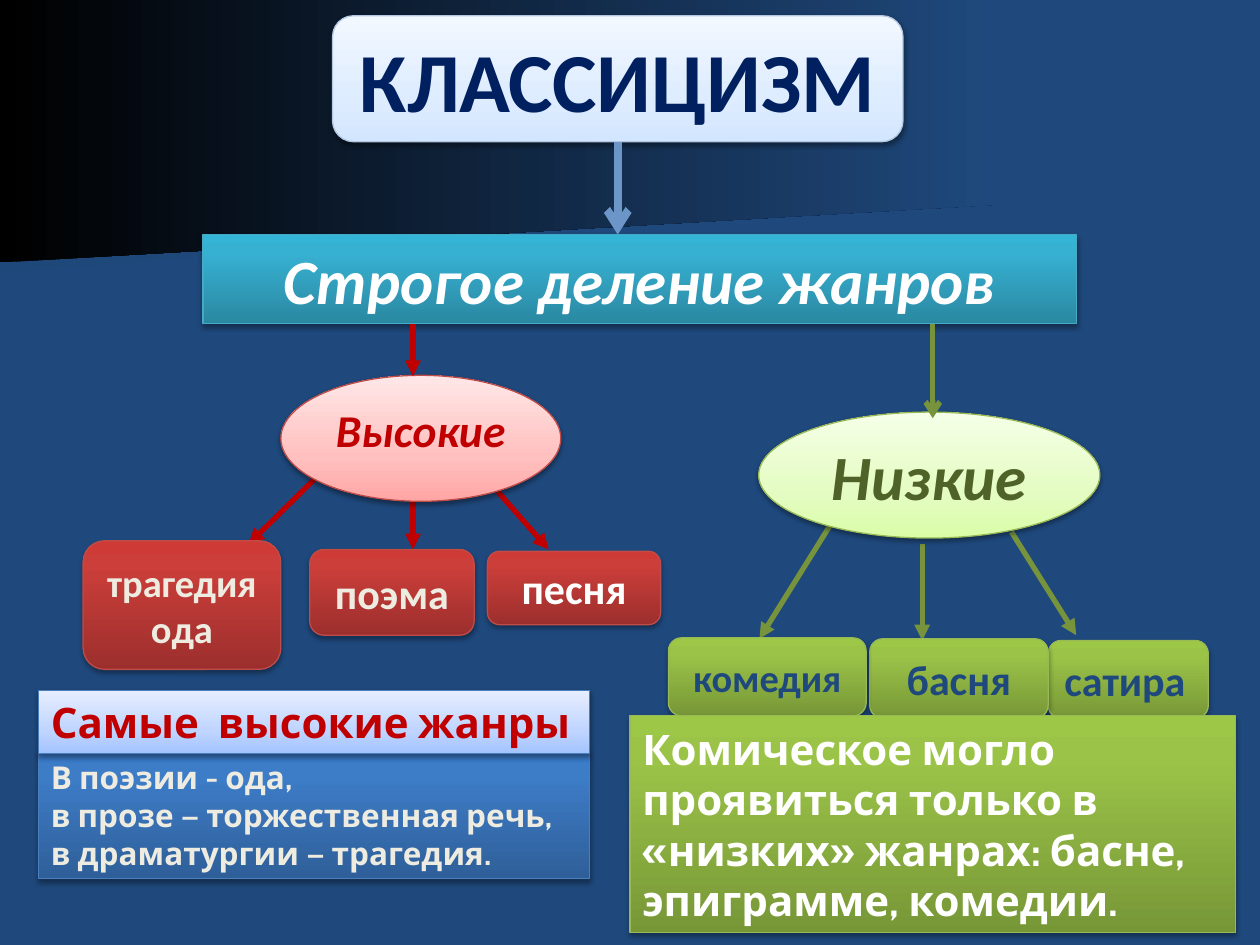
from dataclasses import dataclass
from typing import NamedTuple

from lxml.etree import SubElement
from pptx import Presentation
from pptx.dml.color import RGBColor
from pptx.enum.shapes import MSO_CONNECTOR, MSO_SHAPE
from pptx.enum.text import MSO_ANCHOR, PP_ALIGN
from pptx.oxml.ns import qn
from pptx.util import Pt


class Finish(NamedTuple):
    stops: tuple  # (position in percent, colour), from bottom to top
    outline: str
    shadow: tuple = (35, 1.8)  # opacity in percent, distance


PALE_SHADOW = (38, 1.6)


@dataclass(frozen=True)
class Theme:
    ground: str = "1F497D"
    black: str = "000000"
    sweep: str = "1E477A"
    white: str = "FFFFFF"
    cream: str = "EEECE1"
    navy: str = "002060"
    red: str = "C00000"
    green: str = "77933C"
    dark_green: str = "4F6228"
    blue: str = "6D96C8"

    title_size: int = 48
    heading_size: int = 36
    subheading_size: int = 26
    genre_size: int = 24
    long_genre_size: int = 22
    body_size: int = 18
    font: str = "Calibri"
    note_font: str = "Cabin"

    ice: Finish = Finish(((0, "D2E6FF"), (35, "DEECFF"), (100, "F2F8FF")), "B3C7E0", PALE_SHADOW)
    lavender: Finish = Finish(((0, "A4C4FF"), (35, "BFD4FF"), (100, "E6EEFF")), "4B7EBC", PALE_SHADOW)
    pink: Finish = Finish(((0, "FFA6A5"), (35, "FFC0BF"), (100, "FFE7E7")), "BF4C48", PALE_SHADOW)
    lime: Finish = Finish(((0, "DAFDA7"), (35, "E4FCC2"), (100, "F5FFE7")), "98B955", PALE_SHADOW)
    teal: Finish = Finish(((0, "2A88A2"), (80, "37B1D2"), (100, "34B4D6")), "46AAC5")
    brick: Finish = Finish(((0, "9C2F2D"), (80, "CB3E3A"), (100, "CE3B37")), "BF4C48")
    grass: Finish = Finish(((0, "779737"), (80, "9BC348"), (100, "9DC746")), "98B955")
    azure: Finish = Finish(((0, "2F5F99"), (80, "3D7CC7"), (100, "3A7CCB")), "4B7EBC")


THEME = Theme()


def paint_gradient(shape, stops, angle):
    shape.fill.gradient()
    shape.fill.gradient_angle = angle
    stop_list = next(shape.element.spPr.iter(qn("a:gsLst")))
    stop_list.clear()
    for position, color in stops:
        stop = SubElement(stop_list, qn("a:gs"), pos=str(position * 1000))
        SubElement(stop, qn("a:srgbClr"), val=color)


def cast_shadow(shape, opacity, distance):
    shape.shadow.inherit = False
    effects = shape.element.spPr.find(qn("a:effectLst"))
    shadow = SubElement(effects, qn("a:outerShdw"), blurRad=str(Pt(3.1)), dist=str(Pt(distance)),
                        dir="5400000", rotWithShape="0")
    color = SubElement(shadow, qn("a:srgbClr"), val=THEME.black)
    SubElement(color, qn("a:alpha"), val=str(opacity * 1000))


def write(shape, text, *, size, color, font=THEME.font, italic=False,
          align=PP_ALIGN.CENTER, bottom_inset=3.6):
    frame = shape.text_frame
    frame.word_wrap = True
    frame.vertical_anchor = MSO_ANCHOR.MIDDLE
    frame.margin_bottom = Pt(bottom_inset)
    frame.text = text
    for paragraph in frame.paragraphs:
        paragraph.alignment = align
        style = paragraph.font
        style.name, style.size = font, Pt(size)
        style.bold, style.italic = True, italic
        style.color.rgb = RGBColor.from_string(color)


def add_panel(slide, kind, box, finish, text, **text_format):
    panel = slide.shapes.add_shape(kind, *map(Pt, box))
    paint_gradient(panel, finish.stops, 90)
    panel.line.color.rgb = RGBColor.from_string(finish.outline)
    panel.line.width = Pt(0.75)
    cast_shadow(panel, *finish.shadow)
    write(panel, text, **text_format)
    return panel


def add_arrow(slide, start, end, color, width=3, head="triangle"):
    arrow = slide.shapes.add_connector(MSO_CONNECTOR.STRAIGHT, *map(Pt, (*start, *end)))
    arrow.line.color.rgb = RGBColor.from_string(color)
    arrow.line.width = Pt(width)
    SubElement(arrow.line._get_or_add_ln(), qn("a:tailEnd"), type=head)
    SubElement(arrow.element.spPr, qn("a:effectLst"))
    return arrow


def add_backdrop(slide, box):
    left, top, _, _ = box
    slide.background.fill.solid()
    slide.background.fill.fore_color.rgb = RGBColor.from_string(THEME.ground)
    sweeps = [
        (THEME.sweep, [(560, 110), (0, 156), (0, 73), (561, 73), (560, 92)]),
        (THEME.black, [(570, 117), (0, 150), (0, 0), (570, 0)]),
    ]
    for color, outline in sweeps:
        first, *rest = [(Pt(left + x), Pt(top + y)) for x, y in outline]
        builder = slide.shapes.build_freeform(*first)
        builder.add_line_segments(rest, close=True)
        sweep = builder.convert_to_shape()
        paint_gradient(sweep, ((0, color), (100, THEME.ground)), 0)
        sweep.line.fill.background()
        sweep.shadow.inherit = False


def add_heading(slide, box):
    left, top, width, height = box
    title = add_panel(slide, MSO_SHAPE.ROUNDED_RECTANGLE, (left + 74, top, 326, 72), THEME.ice,
                      "КЛАССИЦИЗМ", size=THEME.title_size, color=THEME.navy)
    banner_top = top + height - 51
    add_panel(slide, MSO_SHAPE.RECTANGLE, (left, banner_top, width, 51), THEME.teal,
              "Строгое деление жанров", size=THEME.heading_size, color=THEME.white, italic=True)
    middle = left + 74 + 326 / 2
    arrow = add_arrow(slide, (middle, top + 72), (middle, banner_top), THEME.blue, 4.5, "arrow")
    arrow.begin_connect(title, 2)


def add_branch(slide, box, *, name, name_box, name_finish, name_format, genres, genre_finish,
               arrows, entry, entry_head, color):
    left, top, _, _ = box

    def shift(x, y, *size):
        return (left + x, top + y, *size)

    # Arrows to the genres run under the ellipse and the genre boxes
    for start, end in arrows:
        add_arrow(slide, shift(*start), shift(*end), color)
    add_panel(slide, MSO_SHAPE.OVAL, shift(*name_box), name_finish, name, italic=True, **name_format)
    for genre, genre_box, genre_format in genres:
        add_panel(slide, MSO_SHAPE.ROUNDED_RECTANGLE, shift(*genre_box), genre_finish, genre,
                  **genre_format)
    entry_x, entry_length = entry
    add_arrow(slide, shift(entry_x, 0), shift(entry_x, entry_length), color, head=entry_head)


def add_high_note(slide, box):
    left, top, width, height = box
    note_format = dict(font=THEME.note_font, align=PP_ALIGN.LEFT)
    add_panel(slide, MSO_SHAPE.RECTANGLE, (left, top + height - 73, width, 73), THEME.azure,
              "В поэзии - ода,\nв прозе — торжественная речь,\nв драматургии — трагедия.",
              size=THEME.body_size, color=THEME.cream, **note_format)
    add_panel(slide, MSO_SHAPE.RECTANGLE, (left, top, width, 36), THEME.lavender,
              "Самые  высокие жанры", size=THEME.genre_size, color=THEME.red, **note_format)


def add_low_note(slide, box):
    add_panel(slide, MSO_SHAPE.RECTANGLE, box, THEME.grass,
              "Комическое могло проявиться только в «низких» жанрах: басне, эпиграмме, комедии.",
              size=THEME.genre_size, color=THEME.white, font=THEME.note_font, align=PP_ALIGN.LEFT)


def main():
    deck = Presentation()
    deck.slide_width, deck.slide_height = Pt(720), Pt(540)
    slide = deck.slides.add_slide(deck.slide_layouts[6])

    add_backdrop(slide, (0, 0, 720, 540))
    add_heading(slide, (116, 9, 499, 176))

    # High genres
    cream_long = dict(size=THEME.long_genre_size, color=THEME.cream)
    add_branch(
        slide, (47.5, 185, 330, 197), color=THEME.red,
        name="Высокие", name_box=(113, 29.5, 160, 72), name_finish=THEME.pink,
        name_format=dict(size=THEME.subheading_size, color=THEME.red, bottom_inset=14),
        genres=[
            ("трагедия\nода", (0, 124, 113, 73.5), cream_long),
            ("поэма", (129.5, 129, 94, 49), dict(size=THEME.genre_size, color=THEME.cream)),
            ("песня", (231, 130, 99, 42), dict(size=THEME.genre_size, color=THEME.white)),
        ],
        genre_finish=THEME.brick,
        arrows=[((132, 89), (94.5, 126)), ((188.5, 102), (188.5, 129)), ((237, 96), (266, 129))],
        entry=(188.5, 30), entry_head="triangle")

    # Low genres
    blue_genre = dict(size=THEME.genre_size, color=THEME.ground)
    add_branch(
        slide, (382, 185, 309, 225), color=THEME.green,
        name="Низкие", name_box=(51.5, 50.5, 195, 72), name_finish=THEME.lime,
        name_format=dict(size=THEME.heading_size, color=THEME.dark_green),
        genres=[
            ("сатира", (217, 181, 91.5, 44.5), dict(blue_genre, align=PP_ALIGN.LEFT)),
            ("басня", (115, 180, 102, 45.5), blue_genre),
            ("комедия", (0, 179.5, 113, 44.5), dict(blue_genre, size=THEME.long_genre_size)),
        ],
        genre_finish=THEME.grass,
        arrows=[((92.5, 115), (52, 180)), ((145, 126), (145, 181)), ((196, 119), (233, 178))],
        entry=(151, 54), entry_head="arrow")

    add_high_note(slide, (22, 394.5, 315, 107.5))
    add_low_note(slide, (360, 409, 346, 124))
    deck.save("out.pptx")


if __name__ == "__main__":
    main()
